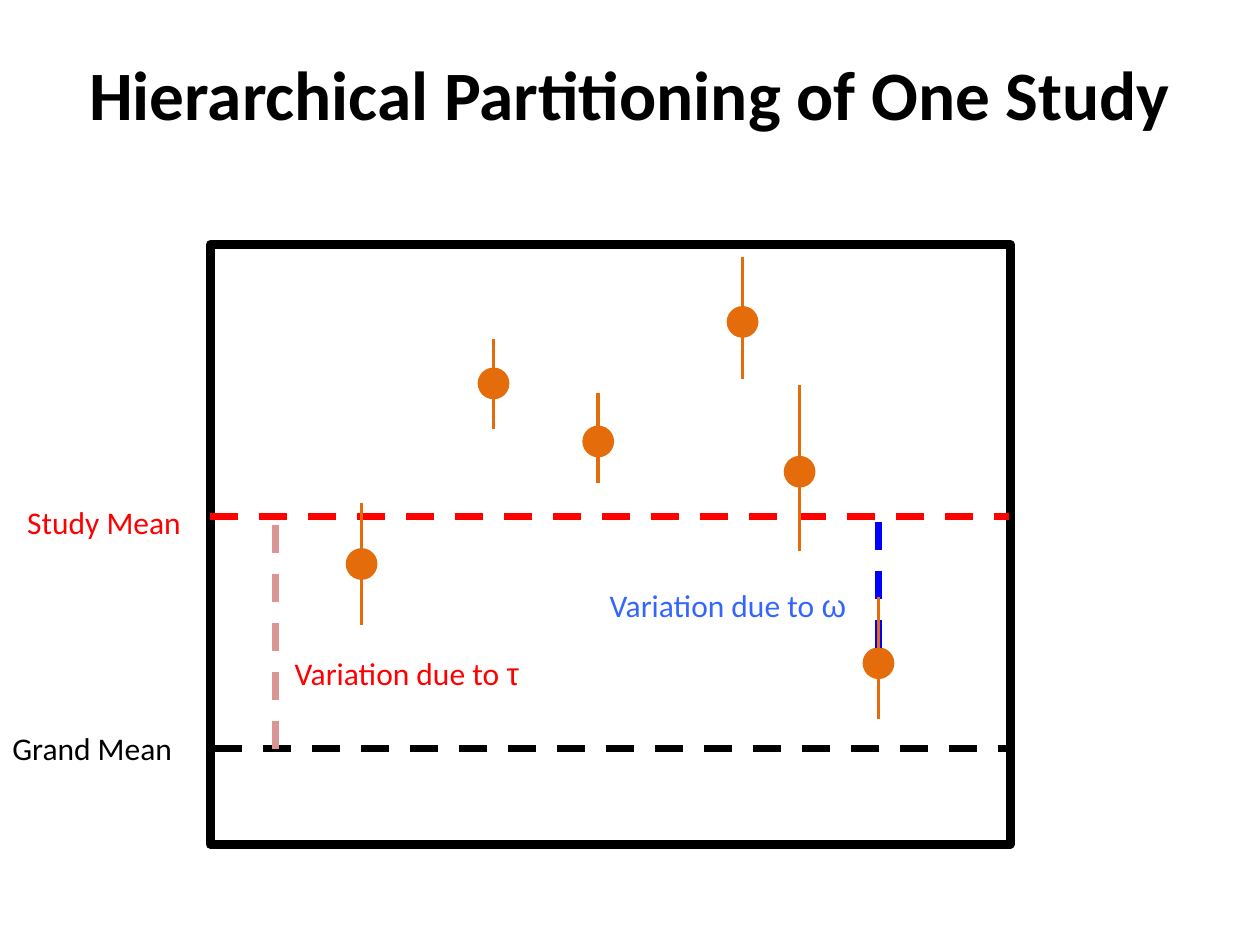
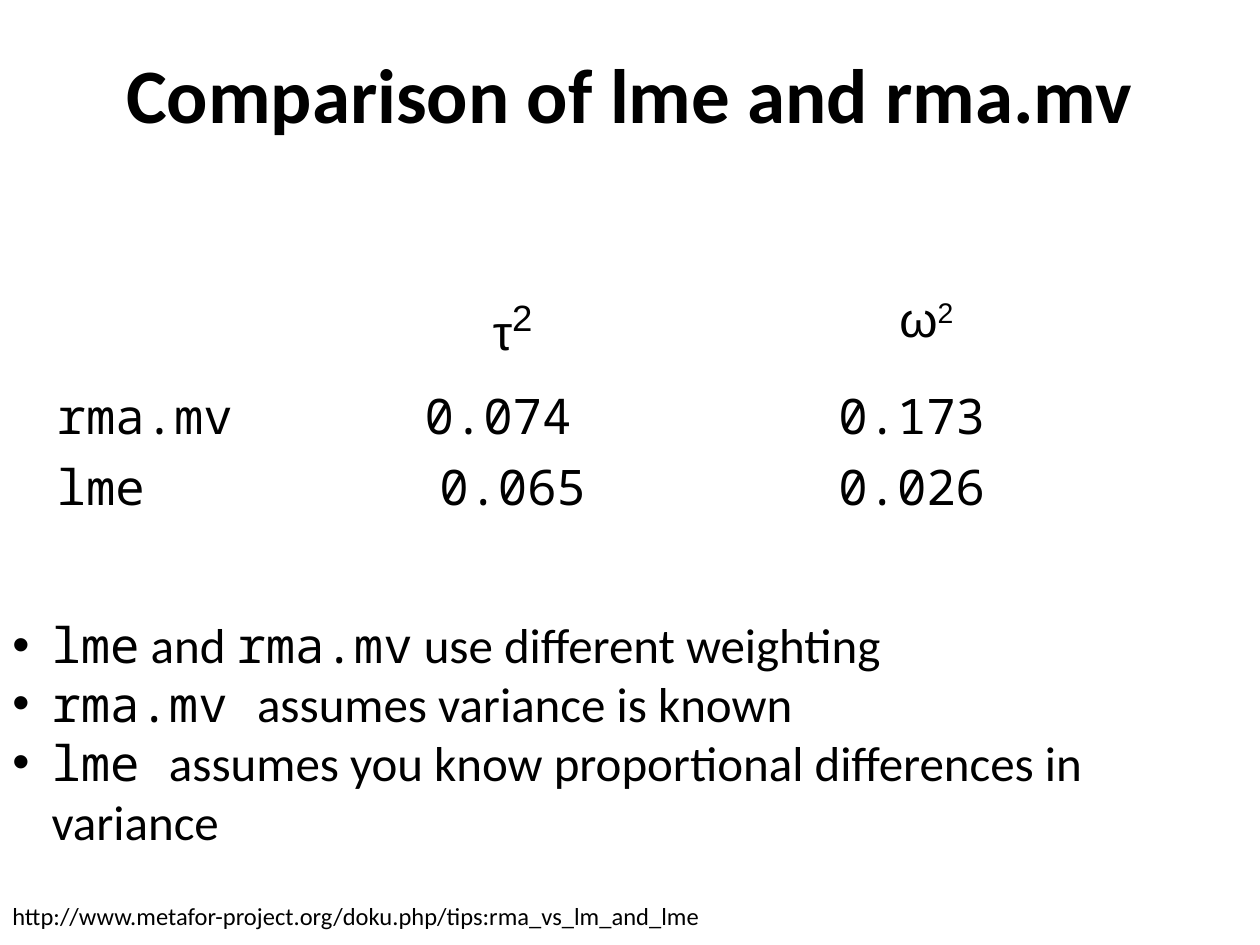
from lxml import etree
from pptx import Presentation
from pptx.dml.color import RGBColor
from pptx.enum.dml import MSO_LINE
from pptx.enum.shapes import MSO_CONNECTOR, MSO_SHAPE
from pptx.enum.text import MSO_ANCHOR, MSO_AUTO_SIZE, PP_ALIGN
from pptx.oxml.ns import qn
from pptx.util import Cm, Pt

STRAIGHT = MSO_CONNECTOR.STRAIGHT
RECTANGLE, OVAL = MSO_SHAPE.RECTANGLE, MSO_SHAPE.OVAL
DASH = MSO_LINE.DASH
MIDDLE = MSO_ANCHOR.MIDDLE
FIT_SHAPE = MSO_AUTO_SIZE.SHAPE_TO_FIT_TEXT
LEFT, CENTER = PP_ALIGN.LEFT, PP_ALIGN.CENTER

BODY, GREEK, CODE = "Calibri", "Arial", "Noto Sans Mono"
BLACK, RED, ROSE = "000000", "FF0000", "D99694"
BLUE, LABEL_BLUE, ORANGE = "0000FF", "3366FF", "E46C0A"


def color(hex_string):
    return RGBColor.from_string(hex_string)


class Deck:
    """Holds the shared style and the slide being built."""

    def __init__(self):
        self.presentation = Presentation()
        self.presentation.slide_width = Cm(25.4)
        self.presentation.slide_height = Cm(19.05)
        self.slide = None

    def new_slide(self, title, size):
        layout = self.presentation.slide_layouts[6]
        self.slide = self.presentation.slides.add_slide(layout)
        box = self.slide.shapes.add_textbox(Cm(0), Cm(0.28), Cm(25.4), Cm(3.18))
        frame = box.text_frame
        frame.word_wrap = True
        frame.vertical_anchor = MIDDLE
        frame.paragraphs[0].alignment = CENTER
        self.run(frame.paragraphs[0], title, size, bold=True)

    def run(self, paragraph, text, size, font=BODY, ink=BLACK, bold=False,
            superscript=False):
        run = paragraph.add_run()
        run.text = text
        run.font.name = font
        run.font.size = Pt(size)
        run.font.bold = bold
        run.font.color.rgb = color(ink)
        if superscript:
            run._r.get_or_add_rPr().set("baseline", "30000")

    def text(self, left, top, width, height, lines, size, ink=BLACK, bullets=False):
        """Each line is a list of (text, font) pairs."""
        box = self.slide.shapes.add_textbox(Cm(left), Cm(top), Cm(width), Cm(height))
        frame = box.text_frame
        frame.word_wrap = False
        frame.auto_size = FIT_SHAPE
        for index, line in enumerate(lines):
            paragraph = frame.add_paragraph() if index else frame.paragraphs[0]
            if bullets:
                self.bullet(paragraph)
            for words, font in line:
                self.run(paragraph, words, size, font, ink)

    def bullet(self, paragraph):
        properties = paragraph._p.get_or_add_pPr()
        properties.set("marL", str(Cm(0.79)))
        properties.set("indent", str(-Cm(0.79)))
        etree.SubElement(properties, qn("a:buFont")).set("typeface", GREEK)
        etree.SubElement(properties, qn("a:buChar")).set("char", "•")

    def shape(self, kind, left, top, width, height, fill=None, outline=None,
              weight=1):
        shape = self.slide.shapes.add_shape(kind, Cm(left), Cm(top), Cm(width),
                                            Cm(height))
        shape.shadow.inherit = False
        if fill:
            shape.fill.solid()
            shape.fill.fore_color.rgb = color(fill)
        else:
            shape.fill.background()
        if outline:
            shape.line.color.rgb = color(outline)
            shape.line.width = Pt(weight)
        else:
            shape.line.fill.background()

    def line(self, x1, y1, x2, y2, ink, weight, dashed=False):
        connector = self.slide.shapes.add_connector(STRAIGHT, Cm(x1), Cm(y1),
                                                    Cm(x2), Cm(y2))
        connector.line.color.rgb = color(ink)
        connector.line.width = Pt(weight)
        if dashed:
            connector.line.dash_style = DASH
        etree.SubElement(connector._element.spPr, qn("a:effectLst"))

    def table(self, left, top, widths, row_height, rows):
        """Each cell is a list of (text, font, size, superscript) runs."""
        table = self.slide.shapes.add_table(
            len(rows), len(widths), Cm(left), Cm(top), Cm(sum(widths)),
            Cm(row_height * len(rows))).table
        table.first_row = table.horz_banding = False
        for column, width in zip(table.columns, widths):
            column.width = Cm(width)
        for row_index, row in enumerate(rows):
            table.rows[row_index].height = Cm(row_height)
            for column_index, runs in enumerate(row):
                cell = table.cell(row_index, column_index)
                cell.fill.background()
                paragraph = cell.text_frame.paragraphs[0]
                paragraph.alignment = CENTER if column_index else LEFT
                for words, font, size, superscript in runs:
                    self.run(paragraph, words, size, font, superscript=superscript)


def build_partitioning(deck):
    deck.new_slide("Hierarchical Partitioning of One Study", 39.6)
    deck.shape(RECTANGLE, 4.24, 4.93, 16.13, 12.09, outline=BLACK, weight=5)

    # Effect sizes: x, estimate, upper and lower end of the interval
    effects = [
        (12.06, 8.9, 7.92, 9.73),
        (16.12, 9.51, 7.77, 11.1),
        (9.95, 7.73, 6.83, 8.64),
        (14.97, 6.49, 5.18, 7.65),
        (17.71, 13.37, 12.04, 14.5),
        (7.29, 11.37, 10.13, 12.6),
    ]
    diameter = 0.64
    for x, estimate, _, _ in effects:
        deck.shape(OVAL, x - diameter / 2, estimate - diameter / 2, diameter,
                   diameter, fill=ORANGE)

    # Means and the variation around them, each with its label
    grand_mean, study_mean = 15.09, 10.41
    deck.line(4.32, grand_mean, 20.45, grand_mean, BLACK, 4, dashed=True)
    deck.text(0, 14.58, 4.09, 1.02, [[("Grand Mean", BODY)]], 18)
    deck.line(4.24, study_mean, 20.35, study_mean, RED, 4, dashed=True)
    deck.text(0.3, 10.01, 3.94, 1.02, [[("Study Mean", BODY)]], 18, RED)
    variations = [
        (5.56, grand_mean, ROSE, "τ", 5.69, 13.06, 5.54, RED),
        (17.71, 13.06, BLUE, "ω", 12.04, 11.68, 5.69, LABEL_BLUE),
    ]
    for x, start, ink, symbol, left, top, width, label_ink in variations:
        deck.line(x, start, x, study_mean, ink, 4, dashed=True)
        deck.text(left, top, width, 1.02,
                  [[("Variation due to ", BODY), (symbol, GREEK)]], 18, label_ink)

    # Intervals
    for x, _, upper, lower in effects:
        deck.line(x, upper, x, lower, ORANGE, 2)


def build_comparison(deck):
    deck.new_slide("Comparison of lme and rma.mv", 44)

    # Variance components by function
    header = [
        [],
        [("τ", GREEK, 28, False), ("2", GREEK, 36, True)],
        [("ω", GREEK, 28, False), ("2", GREEK, 28, True)],
    ]
    estimates = [("rma.mv", "0.074 ", "0.173 "), ("lme", "0.065", "0.026 ")]
    rows = [[[(value, CODE, 28, False)] for value in row] for row in estimates]
    deck.table(0.89, 5.79, [6.17, 6.55, 10.13], 1.04, [header] + rows)

    # Differences and source
    deck.text(0, 12.27, 25.6, 3.84, [
        [("lme", CODE), (" and ", BODY), ("rma.mv", CODE),
         (" use different weighting", BODY)],
        [("rma.mv ", CODE), ("assumes variance is known", BODY)],
        [("lme ", CODE),
         ("assumes you know proportional differences in variance", BODY)],
    ], 28, bullets=True)
    deck.text(0, 18.03, 14.55, 0.86, [[
        ("http://www.metafor-project.org/doku.php/tips:rma_vs_lm_and_lme", BODY),
    ]], 14)


def main():
    deck = Deck()
    build_partitioning(deck)
    build_comparison(deck)
    deck.presentation.save("out.pptx")


if __name__ == "__main__":
    main()
